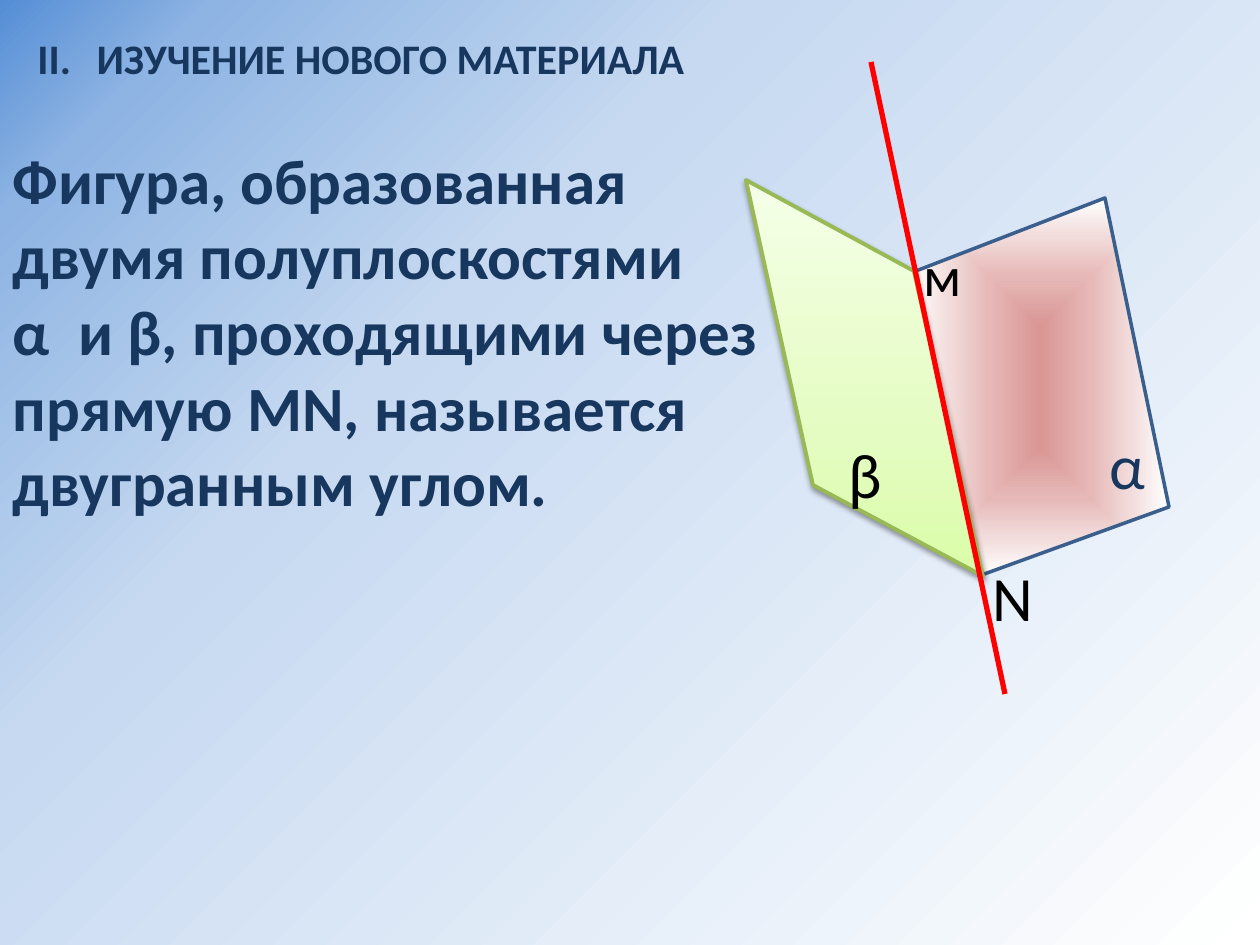
from lxml import etree
from pptx import Presentation
from pptx.dml.color import RGBColor
from pptx.enum.shapes import MSO_CONNECTOR
from pptx.enum.text import MSO_ANCHOR, MSO_AUTO_SIZE, PP_ALIGN
from pptx.oxml import parse_xml
from pptx.oxml.ns import nsdecls, qn
from pptx.util import Emu, Pt

PX = 914400 / 126
FONT = "Calibri"
COLORS = {
    "navy": "17375E", "black": "000000", "edge": "FF0000",
    "alpha_line": "3A5F8C", "beta_line": "98B955",
}
SKY = [(0, "558ED5"), (10, "8EB4E3"), (34, "C6D9F1"), (100, "FFFFFF")]
ROSE = [(0, "D99694"), (40, "E6B9B8"), (70, "F2DCDB"), (100, "FFFFFF")]
LIME = [(0, "DAFDA7"), (35, "E4FCC2"), (100, "F5FFE7")]

CORNER = '<a:path path="circle"><a:fillToRect r="100000" b="100000"/></a:path>'
CENTRE = '<a:path path="shape"><a:fillToRect l="50000" t="50000" r="50000" b="50000"/></a:path>'
UPWARD = '<a:lin ang="16200000" scaled="0"/>'

DEFINITION = [
    "Фигура, образованная",
    "двумя полуплоскостями",
    "α  и β, проходящими через",
    "прямую МN, называется",
    "двугранным углом.",
]


def px(n):
    return Emu(round(n * PX))


def rgb(name):
    return RGBColor.from_string(COLORS[name])


def set_gradient(fill, parent, stops, direction):
    """Fill with colour stops; parent is the element that holds the fill."""
    fill.gradient()
    gs = "".join(f'<a:gs pos="{pos * 1000}"><a:srgbClr val="{color}"/></a:gs>'
                 for pos, color in stops)
    grad = parse_xml(f'<a:gradFill {nsdecls("a")} rotWithShape="1">'
                     f'<a:gsLst>{gs}</a:gsLst>{direction}</a:gradFill>')
    parent.replace(parent.find(qn("a:gradFill")), grad)


def set_text(sp, box, lines, size, color="navy", bold=False, align=PP_ALIGN.LEFT):
    sp.left, sp.top, sp.width, sp.height = map(px, box)
    tf = sp.text_frame
    tf.text = "\n".join(lines)
    tf.word_wrap = False
    tf.auto_size = MSO_AUTO_SIZE.NONE
    tf.vertical_anchor = MSO_ANCHOR.TOP
    for p in tf.paragraphs:
        p.alignment = align
        p.space_before = Pt(0)
        p.font.name, p.font.size, p.font.bold = FONT, Pt(size), bold
        p.font.color.rgb = rgb(color)


def add_label(slide, box, text, size, **style):
    sp = slide.shapes.add_textbox(0, 0, 0, 0)
    set_text(sp, box, [text], size, **style)


def add_heading(slide, x, y):
    add_label(slide, (x, y, 59, 63), "II.", 24, bold=True)
    set_text(slide.shapes.title, (x + 59, y, 619, 63),
             ["ИЗУЧЕНИЕ НОВОГО МАТЕРИАЛА"], 24, bold=True)


def add_definition(slide, box):
    body = slide.placeholders[1]
    set_text(body, box, DEFINITION, 36, bold=True, align=PP_ALIGN.JUSTIFY)
    for p in body.text_frame.paragraphs:
        pPr = p._p.get_or_add_pPr()
        pPr.set("marL", "0")
        pPr.set("indent", "0")
        pPr.find(qn("a:spcBef")).addnext(etree.Element(qn("a:buNone")))


def add_half_plane(slide, x, y, corners, stops, direction, line, width):
    points = [(x + dx, y + dy) for dx, dy in corners]
    builder = slide.shapes.build_freeform(*points[0], scale=PX)
    builder.add_line_segments(points[1:], close=True)
    sp = builder.convert_to_shape()
    sp.shadow.inherit = False
    set_gradient(sp.fill, sp.element.spPr, stops, direction)
    sp.line.color.rgb = rgb(line)
    sp.line.width = Pt(width)
    return sp


def add_soft_shadow(sp):
    sp.element.spPr.find(qn("a:effectLst")).append(parse_xml(
        f'<a:outerShdw {nsdecls("a")} blurRad="{Pt(3.1)}" dist="{Pt(1.6)}" '
        'dir="5400000" rotWithShape="0"><a:srgbClr val="000000">'
        '<a:alpha val="38000"/></a:srgbClr></a:outerShdw>'))


def add_dihedral_angle(slide, x, y):
    add_half_plane(slide, x, y, [(165, 211), (233, 514), (423, 445), (359, 136)],
                   ROSE, CENTRE, "alpha_line", 2)
    beta = add_half_plane(slide, x, y, [(168, 209), (0, 118), (67, 423), (237, 514)],
                          LIME, UPWARD, "beta_line", 2.25)
    add_soft_shadow(beta)

    edge = slide.shapes.add_connector(MSO_CONNECTOR.STRAIGHT, px(x + 125), px(y),
                                      px(x + 259), px(y + 632))
    edge.line.color.rgb = rgb("edge")
    edge.line.width = Pt(3)
    etree.SubElement(edge.element.spPr, qn("a:effectLst"))

    for text, dx, dy, size, color in [
        ("α", 351, 358, 36, "navy"),
        ("β", 90, 367, 36, "black"),
        ("м", 165, 172, 32, "black"),
        ("N", 234, 490, 36, "black"),
    ]:
        add_label(slide, (x + dx, y + dy, 66, 88), text, size, color=color)


def main():
    prs = Presentation()
    prs.slide_width, prs.slide_height = px(1260), px(945)
    slide = prs.slides.add_slide(prs.slide_layouts[1])
    fill = slide.background.fill
    set_gradient(fill, slide.element.find(".//" + qn("p:bgPr")), SKY, CORNER)
    add_heading(slide, 25, 26)
    add_dihedral_angle(slide, 746, 62)
    add_definition(slide, (0, 135, 775, 394))
    prs.save("out.pptx")


if __name__ == "__main__":
    main()
